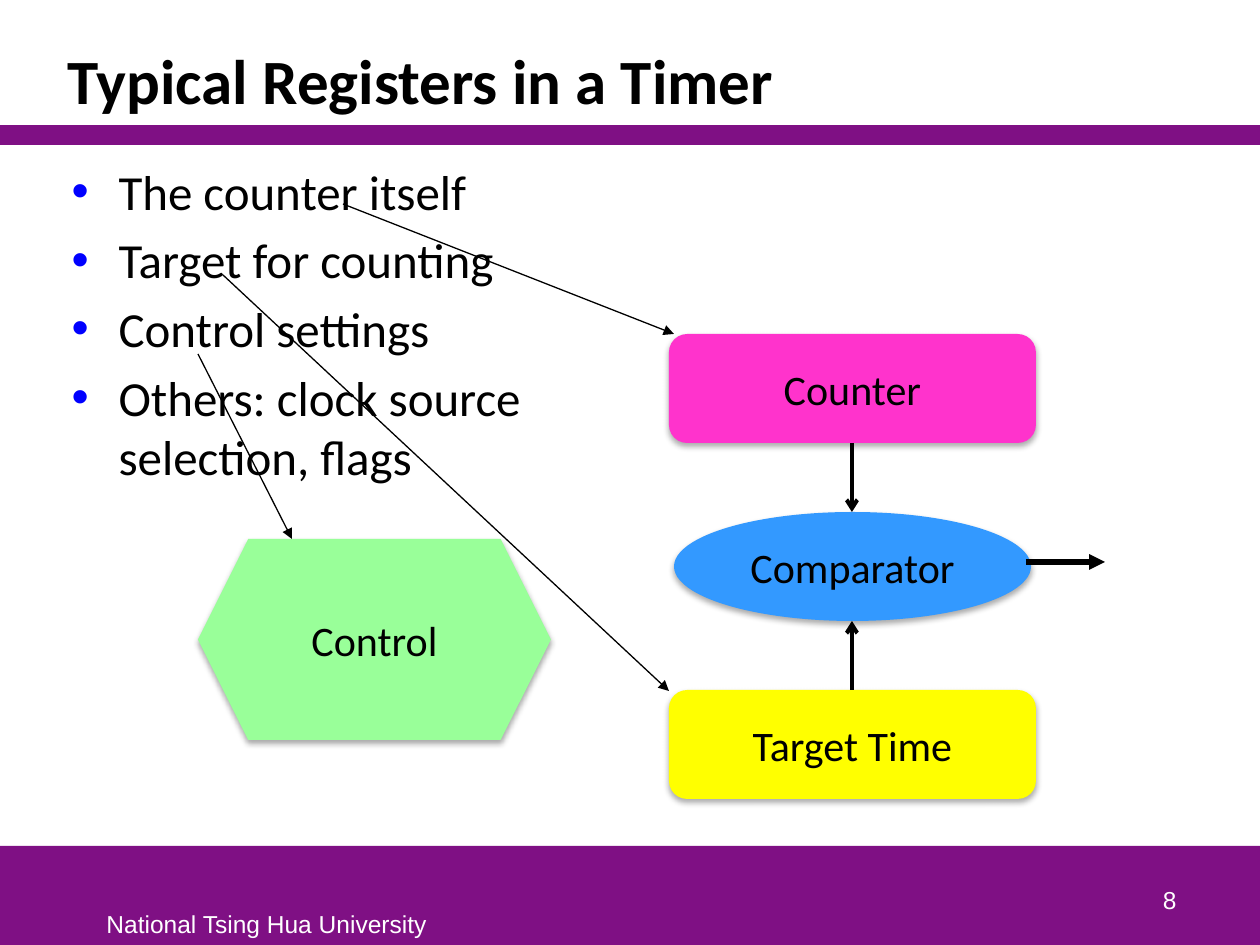
from lxml.etree import SubElement
from pptx import Presentation
from pptx.dml.color import RGBColor
from pptx.enum.shapes import MSO_CONNECTOR, MSO_SHAPE
from pptx.enum.text import MSO_ANCHOR, MSO_AUTO_SIZE, PP_ALIGN
from pptx.oxml.ns import qn
from pptx.util import Pt

PX = 914400 // 126
COLORS = {
    "purple": "7F1084", "black": "000000", "white": "FFFFFF", "bullet": "0000FF",
    "counter": "FF33CC", "target": "FFFF00", "comparator": "3399FF", "control": "99FF99",
}
TITLE = {"name": "Calibri", "size": Pt(36), "bold": True}
BODY = {"name": "Calibri", "size": Pt(28)}
LABEL = {"name": "Calibri", "size": Pt(24)}
FOOTER = {"name": "Arial", "size": Pt(14)}


def rgb(color):
    return RGBColor.from_string(COLORS[color])


def set_attributes(target, values):
    for name, value in values.items():
        setattr(target, name, value)


def place(shape, box):
    set_attributes(shape, dict(zip(("left", "top", "width", "height"), (v * PX for v in box))))


def write(paragraph, text, font, color="black", **layout):
    paragraph.text = text
    set_attributes(paragraph, layout)
    for run in paragraph.runs:
        set_attributes(run.font, font)
        run.font.color.rgb = rgb(color)


def add_block(slide, kind, box, color):
    shape = slide.shapes.add_shape(kind, *(v * PX for v in box))
    shape.shadow.inherit = False
    shape.fill.solid()
    shape.fill.fore_color.rgb = rgb(color)
    shape.line.fill.background()
    return shape


def add_node(slide, kind, box, color, text):
    shape = add_block(slide, kind, box, color)
    shape.text_frame.vertical_anchor = MSO_ANCHOR.MIDDLE
    write(shape.text_frame.paragraphs[0], text, LABEL, alignment=PP_ALIGN.CENTER)
    # Soft shadow straight below the node
    effects = shape.element.spPr.find(qn("a:effectLst"))
    shadow = SubElement(effects, qn("a:outerShdw"), blurRad=str(Pt(3.5)),
                        dist=str(Pt(2.2)), dir="5400000", rotWithShape="0")
    shade = SubElement(shadow, qn("a:srgbClr"), val=COLORS["black"])
    SubElement(shade, qn("a:alpha"), val="32000")


def add_arrow(slide, start, end, width, head="triangle"):
    arrow = slide.shapes.add_connector(
        MSO_CONNECTOR.STRAIGHT, *(v * PX for v in (*start, *end)))
    arrow.line.color.rgb = rgb("black")
    arrow.line.width = Pt(width)
    SubElement(arrow.line._get_or_add_ln(), qn("a:tailEnd"), type=head)
    SubElement(arrow._element.spPr, qn("a:effectLst"))


def add_text(slide, box, text, wrap, anchor, alignment):
    frame = slide.shapes.add_textbox(*(v * PX for v in box)).text_frame
    set_attributes(frame, {"word_wrap": wrap, "vertical_anchor": anchor})
    write(frame.paragraphs[0], text, FOOTER, "white", alignment=alignment)


def fill_title(title, box, text):
    place(title, box)
    set_attributes(title.text_frame, {
        "vertical_anchor": MSO_ANCHOR.BOTTOM, "auto_size": MSO_AUTO_SIZE.NONE})
    write(title.text_frame.paragraphs[0], text, TITLE,
          alignment=PP_ALIGN.LEFT, line_spacing=0.85)


def fill_list(body, box, items):
    place(body, box)
    frame = body.text_frame
    frame.auto_size = MSO_AUTO_SIZE.NONE
    for index, item in enumerate(items):
        paragraph = frame.add_paragraph() if index else frame.paragraphs[0]
        properties = paragraph._p.get_or_add_pPr()
        properties.set("marL", str(47 * PX))
        properties.set("indent", str(-47 * PX))
        bullet_color = SubElement(properties, qn("a:buClr"))
        SubElement(bullet_color, qn("a:srgbClr"), val=COLORS["bullet"])
        SubElement(properties, qn("a:buFont"), typeface="Arial")
        SubElement(properties, qn("a:buChar"), char="•")
        write(paragraph, item, BODY, space_before=Pt(5.6 if index else 0))


def add_footer(slide, box, text, number):
    left, top, width, height = box
    add_block(slide, MSO_SHAPE.RECTANGLE, box, "purple")
    add_text(slide, (left + 94, top + 57, 348, 42), text,
             False, MSO_ANCHOR.TOP, PP_ALIGN.LEFT)
    add_text(slide, (left + width - 333, top + 12, 262, 63), number,
             True, MSO_ANCHOR.BOTTOM, PP_ALIGN.RIGHT)


def add_timer(slide, box):
    """Counter and target time feed the comparator between them."""
    left, top, width, height = box
    node_height = 109
    middle = left + width // 2
    gap = (height - 3 * node_height) // 2
    tops = [top + row * (node_height + gap) for row in range(3)]
    rounded = MSO_SHAPE.ROUNDED_RECTANGLE
    add_node(slide, rounded, (left, tops[0], width, node_height), "counter", "Counter")
    add_node(slide, rounded, (left, tops[2], width, node_height), "target", "Target Time")
    add_node(slide, MSO_SHAPE.OVAL, (left + 5, tops[1], width - 10, node_height),
             "comparator", "Comparator")
    # Inputs from above and below, then the output
    add_arrow(slide, (middle, tops[0] + node_height), (middle, tops[1]), 2.25, "arrow")
    add_arrow(slide, (middle, tops[2]), (middle, tops[1] + node_height), 2.25, "arrow")
    output = tops[1] + 50
    add_arrow(slide, (left + width - 10, output), (left + width + 69, output), 3)


def main():
    presentation = Presentation()
    presentation.slide_width, presentation.slide_height = 1260 * PX, 945 * PX
    slide = presentation.slides.add_slide(presentation.slide_layouts[1])
    title, body = slide.placeholders

    # Bands, title and list
    add_block(slide, MSO_SHAPE.RECTANGLE, (0, 125, 1260, 20), "purple")
    add_footer(slide, (0, 846, 1260, 99), "National Tsing Hua University", "8")
    fill_title(title, (55, 31, 1130, 93), "Typical Registers in a Timer")
    fill_list(body, (59, 155, 1126, 684), [
        "The counter itself", "Target for counting", "Control settings",
        "Others: clock source \vselection, flags"])

    # Register diagram
    add_timer(slide, (669, 334, 367, 465))
    add_node(slide, MSO_SHAPE.HEXAGON, (198, 539, 353, 201), "control", "Control")

    # List items point to their registers
    for start, end in (((343, 204), (674, 334)), ((223, 275), (669, 691)),
                       ((198, 354), (292, 539))):
        add_arrow(slide, start, end, 0.75)

    presentation.save("out.pptx")


if __name__ == "__main__":
    main()
